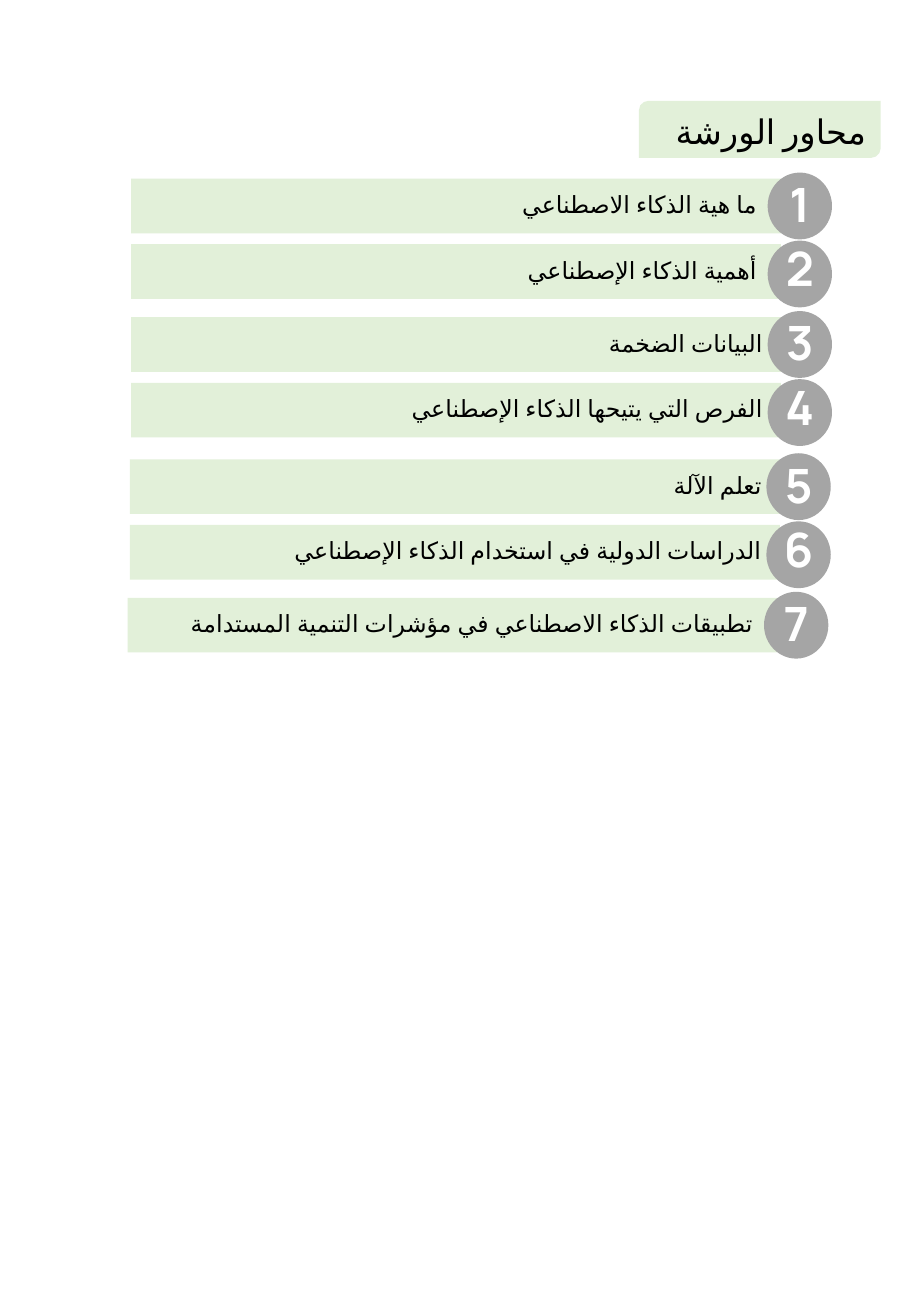
from lxml import etree
from pptx import Presentation
from pptx.dml.color import RGBColor
from pptx.enum.shapes import MSO_SHAPE
from pptx.enum.text import MSO_ANCHOR, MSO_AUTO_SIZE, PP_ALIGN
from pptx.oxml.ns import qn
from pptx.util import Inches, Pt

RECTANGLE = MSO_SHAPE.RECTANGLE
ELLIPSE = MSO_SHAPE.OVAL
DIAGONAL_ROUND = MSO_SHAPE.ROUND_2_DIAG_RECTANGLE
MIDDLE = MSO_ANCHOR.MIDDLE
NO_AUTOFIT = MSO_AUTO_SIZE.NONE
RIGHT, CENTER = PP_ALIGN.RIGHT, PP_ALIGN.CENTER

COLORS = {"bar": "E2F0D9", "badge": "A5A5A5", "text": "000000", "number": "FFFFFF"}
TITLE_ONLY = 5

BAR_SIZE = (5.35, 0.45)
BADGE_SIZE = (0.53, 0.55)
BADGE_OFFSET = 5.24
NUMBER_SIZE = (0.53, 0.57)
TITLE_BOX = (5.26, 0.83, 1.99, 0.47)

# Topic, bar left, bar top, right inset of the text
TOPICS = [
    ("ما هية الذكاء الاصطناعي", 1.08, 1.47, 0.2),
    ("أهمية الذكاء الإصطناعي", 1.08, 2.01, 0.2),
    ("البيانات الضخمة", 1.08, 2.61, 0.15),
    ("الفرص التي يتيحها الذكاء الإصطناعي", 1.08, 3.15, 0.15),
    ("تعلم الآلة", 1.07, 3.78, 0.15),
    ("الدراسات الدولية في استخدام الذكاء الإصطناعي", 1.07, 4.32, 0.15),
    ("تطبيقات الذكاء الاصطناعي في مؤشرات التنمية المستدامة", 1.05, 4.92, 0.2),
]


def set_arabic(run, font):
    """Mark the run as Arabic and name its complex-script font."""
    properties = run._r.get_or_add_rPr()
    properties.set("lang", "ar-SA")
    etree.SubElement(properties, qn("a:cs")).set("typeface", font)


def write(frame, text, *, font, size, color, align=RIGHT, bold=False,
          rtl=True, spacing=1.0, inset_right=0.1):
    frame.word_wrap = True
    frame.auto_size = NO_AUTOFIT
    frame.vertical_anchor = MIDDLE
    frame.margin_right = Inches(inset_right)
    paragraph = frame.paragraphs[0]
    paragraph.text = text
    paragraph.alignment = align
    paragraph.line_spacing = spacing
    run = paragraph.runs[0]
    run.font.name = font
    run.font.size = Pt(size)
    run.font.bold = bold
    run.font.color.rgb = RGBColor.from_string(COLORS[color])
    if rtl:
        paragraph._p.get_or_add_pPr().set("rtl", "1")
        set_arabic(run, font)


class AgendaSlide:
    def __init__(self, presentation):
        layout = presentation.slide_layouts[TITLE_ONLY]
        self.slide = presentation.slides.add_slide(layout)

    def panel(self, kind, left, top, size, color):
        panel = self.slide.shapes.add_shape(
            kind, *map(Inches, (left, top, *size)))
        panel.shadow.inherit = False
        panel.fill.solid()
        panel.fill.fore_color.rgb = RGBColor.from_string(COLORS[color])
        panel.line.fill.background()
        return panel

    def title(self, text):
        left, top, *size = TITLE_BOX
        banner = self.panel(DIAGONAL_ROUND, left, top, size, "bar")
        heading = self.slide.shapes.title
        heading.left, heading.top, heading.width, heading.height = map(
            Inches, TITLE_BOX)
        banner._element.addnext(heading._element)
        write(heading.text_frame, text, font="Calibri", size=20, color="text",
              spacing=1.07, inset_right=0.12)

    def topic(self, text, left, top, inset_right):
        bar = self.panel(RECTANGLE, left, top, BAR_SIZE, "bar")
        write(bar.text_frame, text, font="Lato", size=14, color="text",
              spacing=0.9, inset_right=inset_right)

    def badge(self, number, left, top):
        """Draw a numbered circle; even digits sit slightly higher."""
        self.panel(ELLIPSE, left, top, BADGE_SIZE, "badge")
        rise = 0.06 if number % 2 == 0 else 0.03
        digit = self.slide.shapes.add_textbox(
            *map(Inches, (left, top - rise, *NUMBER_SIZE)))
        write(digit.text_frame, str(number), font="Manrope", size=28,
              color="number", align=CENTER, bold=True, rtl=False)


def main():
    presentation = Presentation()
    presentation.slide_width = Inches(7.5)
    presentation.slide_height = Inches(10.83)
    agenda = AgendaSlide(presentation)
    agenda.title("محاور الورشة")
    for number, (topic, left, top, inset_right) in enumerate(TOPICS, start=1):
        agenda.topic(topic, left, top, inset_right)
        badge_rise = 0.03 if number % 2 == 0 else 0.05
        agenda.badge(number, left + BADGE_OFFSET, top - badge_rise)
    presentation.save("out.pptx")


if __name__ == "__main__":
    main()
